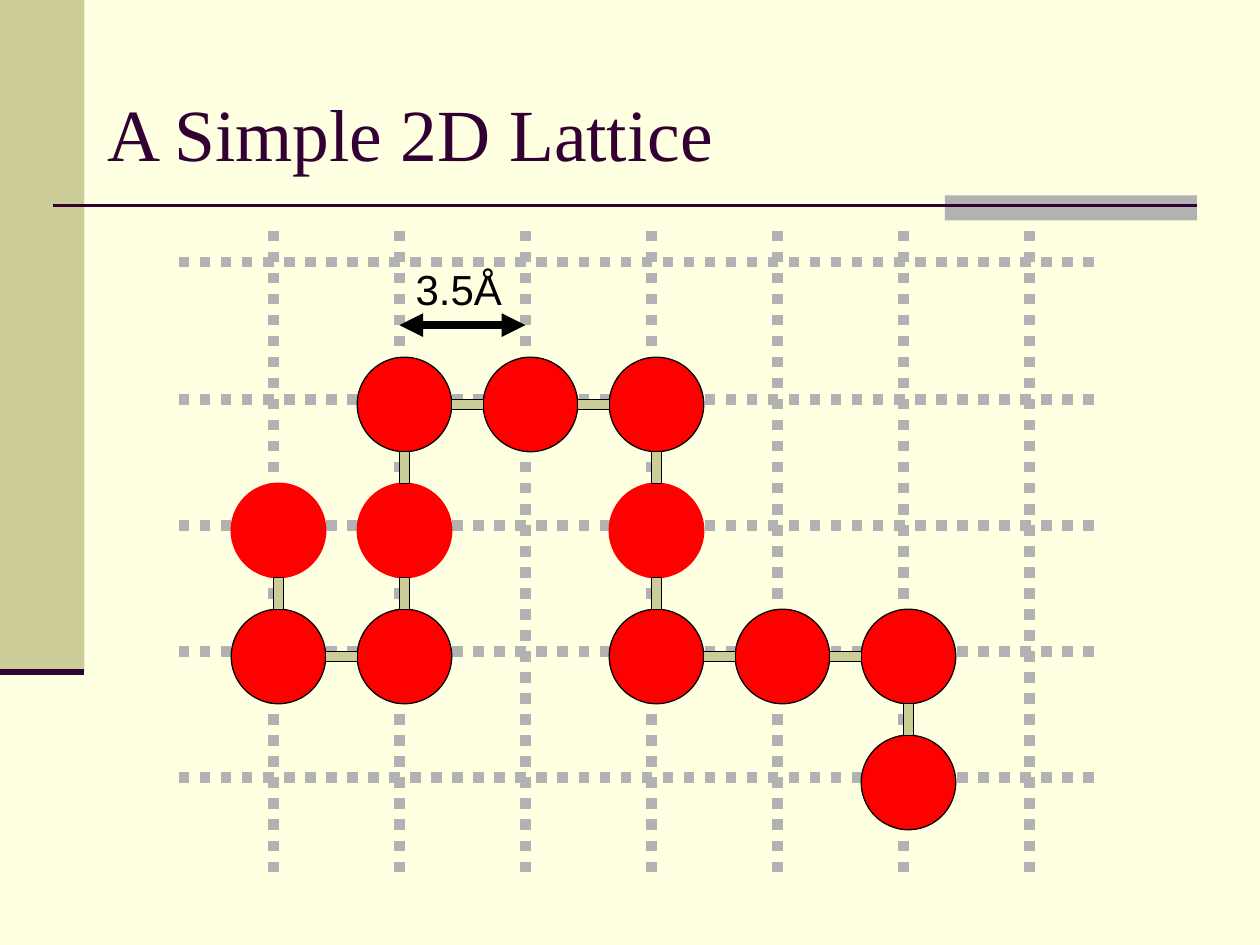
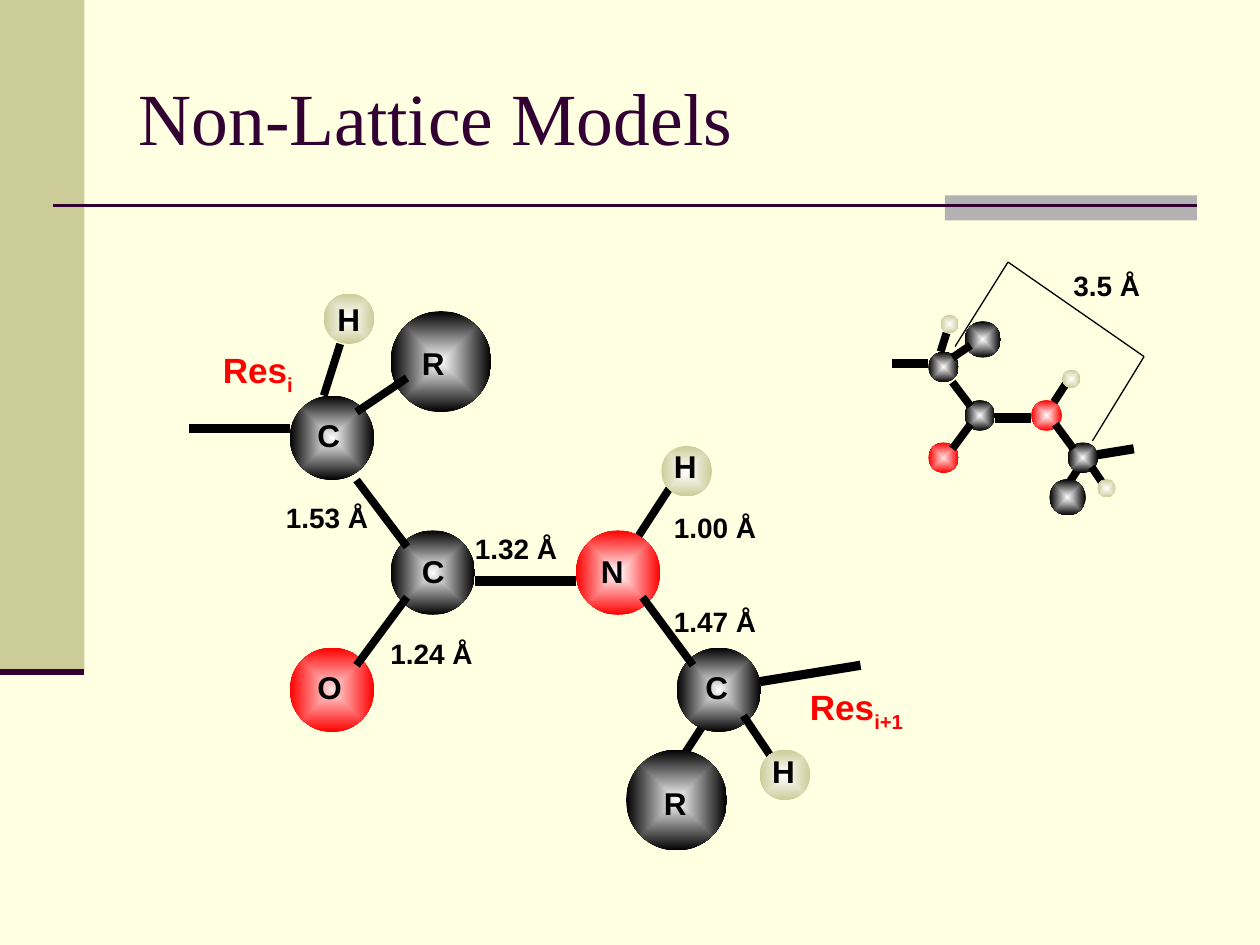
from itertools import pairwise

from lxml.etree import SubElement
from pptx import Presentation
from pptx.dml.color import RGBColor
from pptx.enum.dml import MSO_LINE
from pptx.enum.shapes import MSO_CONNECTOR, MSO_SHAPE
from pptx.enum.text import MSO_ANCHOR, MSO_AUTO_SIZE, PP_ALIGN
from pptx.oxml.ns import qn
from pptx.util import Inches, Pt

CREAM = RGBColor(0xFF, 0xFF, 0xE1)
KHAKI = RGBColor(0xCC, 0xCC, 0x99)
GREY = RGBColor(0xB2, 0xB2, 0xB2)
PLUM = RGBColor(0x33, 0x00, 0x33)
RED = RGBColor(0xFF, 0x00, 0x00)
PINK = RGBColor(0xFF, 0xE0, 0xE0)
BLACK = RGBColor(0x00, 0x00, 0x00)
WHITE = RGBColor(0xFF, 0xFF, 0xFF)

COLUMNS, ROWS = 10, 7.5
CELL = Inches(1)


def add_block(shapes, kind, box, fill, outline=None):
    block = shapes.add_shape(kind, *(int(length * CELL) for length in box))
    block.shadow.inherit = False
    block.fill.solid()
    block.fill.fore_color.rgb = fill
    if outline is None:
        block.line.fill.background()
    else:
        block.line.color.rgb = outline
        block.line.width = Pt(0.75)
    return block


def add_line(shapes, ends, color, width):
    line = shapes.add_connector(MSO_CONNECTOR.STRAIGHT, *(int(end * CELL) for end in ends))
    line.line.color.rgb = color
    line.line.width = Pt(width)
    SubElement(line._element.spPr, qn("a:effectLst"))
    return line


prs = Presentation()
prs.slide_width = int(COLUMNS * CELL)
prs.slide_height = int(ROWS * CELL)
prs.slide_master.background.fill.solid()
prs.slide_master.background.fill.fore_color.rgb = CREAM

slides = []
for heading, left, top in [("A Simple 2D Lattice", 0.75, 0.42), ("Non-Lattice Models", 1, 0.3)]:
    slide = prs.slides.add_slide(prs.slide_layouts[5])
    slides.append(slide)
    add_block(slide.shapes, MSO_SHAPE.RECTANGLE, (0, 0, 0.67, 5.33), KHAKI)
    add_block(slide.shapes, MSO_SHAPE.RECTANGLE, (7.5, 1.55, 2, 0.2), GREY)
    add_line(slide.shapes, (0.42, 1.63, 9.5, 1.63), PLUM, 1.5)
    add_line(slide.shapes, (0, 5.33, 0.67, 5.33), PLUM, 3.5)
    title = slide.shapes.title
    title.left, title.top = int(left * CELL), int(top * CELL)
    title.width, title.height = int(8.5 * CELL), int(1.25 * CELL)
    title.text_frame.text = heading
    title.text_frame.vertical_anchor = MSO_ANCHOR.MIDDLE
    paragraph = title.text_frame.paragraphs[0]
    paragraph.alignment = PP_ALIGN.LEFT
    paragraph.font.name = "Times New Roman"
    paragraph.font.size = Pt(42)
    paragraph.font.color.rgb = PLUM

lattice, model = slides

lattice_rows = [(1.42, y, 8.75, y) for y in (2.08, 3.17, 4.17, 5.17, 6.17)]
lattice_columns = [(2.17 + column, 1.83, 2.17 + column, 6.92) for column in range(7)]
for ends in lattice_rows + lattice_columns:
    add_line(lattice.shapes, ends, GREY, 6).line.dash_style = MSO_LINE.ROUND_DOT

CHAIN_ORIGIN = 2.21
BEAD = 0.75
BOND_LENGTH, BOND_WIDTH = 0.25, 0.08
chain_cells = [(0, 2), (0, 3), (1, 3), (1, 2), (1, 1), (2, 1),
               (3, 1), (3, 2), (3, 3), (4, 3), (5, 3), (5, 4)]
chain = lattice.shapes.add_group_shape().shapes
for column, row in chain_cells:
    corner = CHAIN_ORIGIN - BEAD / 2
    add_block(chain, MSO_SHAPE.OVAL, (corner + column, corner + row, BEAD, BEAD),
              RED, RED if row == 2 else BLACK)
for (column, row), (next_column, next_row) in pairwise(chain_cells):
    width, height = (BOND_LENGTH, BOND_WIDTH) if row == next_row else (BOND_WIDTH, BOND_LENGTH)
    middle_x = CHAIN_ORIGIN + (column + next_column) / 2
    middle_y = CHAIN_ORIGIN + (row + next_row) / 2
    add_block(chain, MSO_SHAPE.RECTANGLE,
              (middle_x - width / 2, middle_y - height / 2, width, height), KHAKI, BLACK)

spacing_arrow = add_line(lattice.shapes, (3.17, 2.58, 4.17, 2.58), BLACK, 4.5)
for arrowhead in ("a:headEnd", "a:tailEnd"):
    SubElement(spacing_arrow._element.spPr.find(qn("a:ln")), qn(arrowhead), type="triangle")

back_bonds = [(5.63, 5.68, 5.37, 6.08, 4.5)]
heavy_atoms = [
    (2.3, 3.14, 0.67, WHITE, BLACK),
    (3.1, 4.21, 0.67, WHITE, BLACK),
    (4.57, 4.21, 0.67, WHITE, RED),
    (5.37, 5.14, 0.67, WHITE, BLACK),
    (2.3, 5.14, 0.67, PINK, RED),
    (3.1, 2.47, 0.8, WHITE, BLACK),
    (4.97, 5.95, 0.8, WHITE, BLACK),
]
front_bonds = [
    (3.23, 4.74, 2.83, 5.28, 4.5),
    (3.77, 4.61, 4.57, 4.61, 5.75),
    (2.83, 3.81, 3.23, 4.34, 4.5),
    (3.23, 3, 2.83, 3.27, 4.5),
    (1.5, 3.4, 2.3, 3.4, 5.25),
    (2.7, 2.73, 2.57, 3.14, 4.5),
    (5.1, 4.74, 5.5, 5.28, 4.5),
    (5.33, 3.85, 5.07, 4.25, 4.5),
    (5.9, 5.68, 6.17, 6.08, 4.5),
    (6.03, 5.41, 6.83, 5.28, 5.25),
]
hydrogens = [(x, y, 0.4, WHITE, KHAKI) for x, y in [(2.57, 2.33), (5.25, 3.54), (6.03, 5.95)]]

MOLECULE_LEFT, MOLECULE_TOP = 1.5, 2.33
for scale, left, top in [(1, MOLECULE_LEFT, MOLECULE_TOP), (0.36, 7.08, 2.5)]:
    molecule = model.shapes.add_group_shape().shapes
    shift_x, shift_y = left - MOLECULE_LEFT * scale, top - MOLECULE_TOP * scale
    for bonds, atoms in [(back_bonds, heavy_atoms), (front_bonds, hydrogens)]:
        for x1, y1, x2, y2, thickness in bonds:
            add_line(molecule, (shift_x + x1 * scale, shift_y + y1 * scale,
                                shift_x + x2 * scale, shift_y + y2 * scale), BLACK, thickness)
        for x, y, diameter, core, rim in atoms:
            atom = add_block(molecule, MSO_SHAPE.OVAL,
                             (shift_x + x * scale, shift_y + y * scale,
                              diameter * scale, diameter * scale), rim)
            atom.fill.gradient()
            for stop, position, color in zip(atom.fill.gradient_stops, (0, 1), (core, rim)):
                stop.position = position
                stop.color.rgb = color
            gradient = atom._element.spPr.find(qn("a:gradFill"))
            gradient.remove(gradient.find(qn("a:lin")))
            glow = SubElement(gradient, qn("a:path"), path="shape")
            SubElement(glow, qn("a:fillToRect"), l="50000", t="50000", r="50000", b="50000")

for ends in [(7.58, 2.75, 8, 2.08), (8.67, 3.5, 9.08, 2.83), (8, 2.08, 9.08, 2.83)]:
    add_line(model.shapes, ends, BLACK, 0.75)

distances = [("1.00 Å", 5.25, 4, 0.86), ("1.32 Å", 3.67, 4.17, 0.86), ("1.47 Å", 5.25, 4.75, 0.86),
             ("1.53 Å", 2.17, 3.92, 0.86), ("1.24 Å", 3, 5, 0.86), ("3.5 Å", 8.42, 2.08, 0.73)]
elements = [("C", 3.25, 4.33, 0.45), ("N", 4.67, 4.33, 0.38), ("O", 2.42, 5.25, 0.4),
            ("R", 3.25, 2.68, 0.38), ("C", 2.42, 3.25, 0.38), ("H", 2.58, 2.33, 0.38),
            ("C", 5.5, 5.25, 0.38), ("R", 5.17, 6.17, 0.38), ("H", 5.25, 3.5, 0.38),
            ("H", 6.03, 5.92, 0.38)]
residues = [("Res_i", 1.67, 2.72, 0.76), ("Res_i+1", 6.33, 5.39, 0.97)]
label_sets = [
    (lattice, [("3.5Å", 3.2, 2.04, 0.89)], 0.5, 24, BLACK, False),
    (model, distances, 0.37, 16, BLACK, True),
    (model, elements, 0.4, 18, BLACK, True),
    (model, residues, 0.43, 20, RED, True),
]
for slide, labels, height, size, color, bold in label_sets:
    for wording, x, y, width in labels:
        label = slide.shapes.add_textbox(*(int(length * CELL) for length in (x, y, width, height)))
        label.text_frame.word_wrap = False
        label.text_frame.auto_size = MSO_AUTO_SIZE.SHAPE_TO_FIT_TEXT
        paragraph = label.text_frame.paragraphs[0]
        paragraph.font.name = "Arial"
        paragraph.font.size = Pt(size)
        paragraph.font.bold = bold
        paragraph.font.color.rgb = color
        base, _, subscript = wording.partition("_")
        paragraph.add_run().text = base
        if subscript:
            index = paragraph.add_run()
            index.text = subscript
            index._r.get_or_add_rPr().set("baseline", "-25000")

prs.save("out.pptx")
